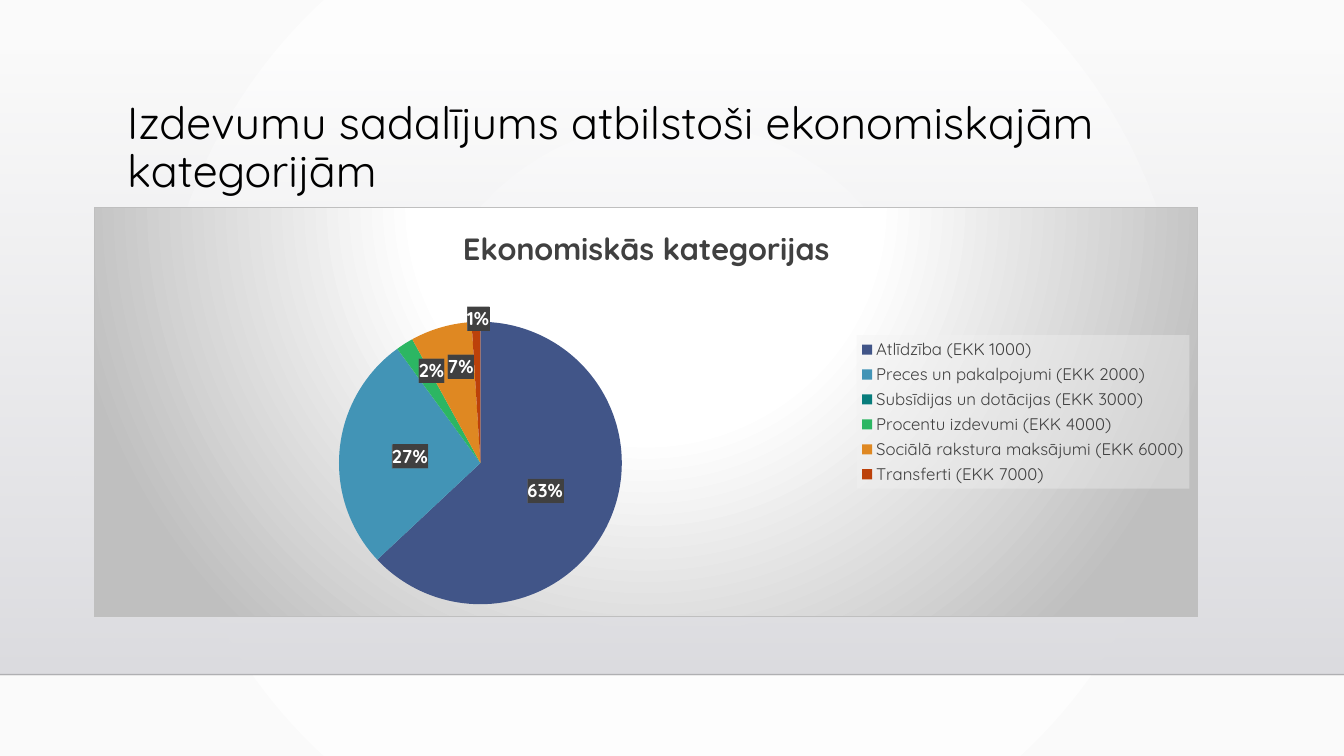
from copy import deepcopy
from dataclasses import dataclass

from lxml.etree import _Element as Element
from pptx import Presentation
from pptx.chart.data import CategoryChartData
from pptx.dml.color import RGBColor
from pptx.enum.chart import XL_CHART_TYPE as ChartType, XL_LABEL_POSITION as LabelPosition
from pptx.enum.chart import XL_LEGEND_POSITION as LegendPosition
from pptx.enum.shapes import MSO_CONNECTOR as Connector, MSO_SHAPE as Shape
from pptx.enum.text import MSO_ANCHOR as Anchor, PP_ALIGN as Align
from pptx.oxml import parse_xml
from pptx.oxml.ns import nsdecls, qn
from pptx.util import Cm, Pt

FONT = "Quicksand"
TOTAL_NAME = "Ekonomiskās kategorijas"


@dataclass(frozen=True)
class Category:
    name: str
    percent: int
    color: str
    label_shift: tuple[float, float] | None = None


CATEGORIES = [
    Category("Atlīdzība (EKK 1000)", 63, "415588"),
    Category("Preces un pakalpojumi (EKK 2000)", 27, "4294B6"),
    Category("Subsīdijas un dotācijas (EKK 3000)", 0, "087D7C"),
    Category("Procentu izdevumi (EKK 4000)", 2, "2CB663", (-0.01, -0.08)),
    Category("Sociālā rakstura maksājumi (EKK 6000)", 7, "DF8822", (0, -0.07)),
    Category("Transferti (EKK 7000)", 1, "BC410A", (0, -0.18)),
]


def rgb(color: str) -> RGBColor:
    return RGBColor.from_string(color)


def set_font(font, size: float, color: str, bold: bool = False) -> None:
    font.name, font.size, font.bold = FONT, Pt(size), bold
    font.color.rgb = rgb(color)


def solid(color: str, alpha: int = 100) -> str:
    return f'<a:srgbClr val="{color}"><a:alpha val="{alpha * 1000}"/></a:srgbClr>'


def gradient(stops: list[tuple[int, str, int]], direction: str) -> str:
    marks = "".join(f'<a:gs pos="{at * 1000}">{solid(color, alpha)}</a:gs>'
                    for at, color, alpha in stops)
    return (f'<a:gradFill {nsdecls("a")} rotWithShape="1">'
            f'<a:gsLst>{marks}</a:gsLst>{direction}</a:gradFill>')


def circle(top: int, bottom: int) -> str:
    return (f'<a:path path="circle"><a:fillToRect l="50000" t="{top * 1000}" '
            f'r="50000" b="{bottom * 1000}"/></a:path>')


def chart_frame(content: str) -> Element:
    return parse_xml(f'<c:spPr {nsdecls("c", "a")}>{content}</c:spPr>')


def add_backdrop(slide, width: int) -> None:
    paper = gradient([(0, "FFFFFF", 100), (100, "FAFAFA", 100)], circle(50, 50))
    slide.element.cSld.insert(0, parse_xml(
        f'<p:bg {nsdecls("p", "a")}><p:bgPr>{paper}<a:effectLst/></p:bgPr></p:bg>'))

    wall = slide.shapes.add_shape(Shape.RECTANGLE, 0, Cm(1.3), width, Cm(15.7))
    wall.shadow.inherit = False
    wall.line.fill.background()
    shade = gradient([(0, "DCDCE0", 0), (100, "DEDEE2", 100)],
                     '<a:lin ang="5400000" scaled="0"/>')
    wall.element.spPr.find(qn("a:prstGeom")).addnext(parse_xml(shade))

    floor = slide.shapes.add_connector(Connector.STRAIGHT, 0, Cm(17), width, Cm(17))
    floor.line.width = Pt(1)
    floor.line.color.rgb = rgb("000001")
    ink = floor.element.spPr.find(".//" + qn("a:srgbClr"))
    ink.append(parse_xml(f'<a:alpha {nsdecls("a")} val="20000"/>'))
    floor.element.spPr.append(parse_xml(f'<a:effectLst {nsdecls("a")}/>'))


def add_heading(slide, text: str) -> None:
    heading = slide.shapes.title
    heading.element.getparent().append(heading.element)
    heading.left, heading.top, heading.width, heading.height = (
        Cm(2.95), Cm(2.29), Cm(26.67), Cm(2.92))
    frame = heading.text_frame
    frame.word_wrap = True
    frame.vertical_anchor = Anchor.MIDDLE
    line = frame.paragraphs[0]
    line.alignment, line.line_spacing = Align.LEFT, 0.9
    run = line.add_run()
    run.text = text
    set_font(run.font, 32, "000000")


def format_labels(series) -> None:
    labels = series.data_labels
    labels.show_value, labels.show_percentage = False, True
    labels.number_format, labels.number_format_is_linked = "0%", False
    labels.position = LabelPosition.CENTER
    set_font(labels.font, 13.3, "FFFFFF", True)
    root = series._element.find(qn("c:dLbls"))
    for leader in root.findall(qn("c:showLeaderLines")):
        leader.set("val", "0")
    root.find(qn("c:txPr")).addprevious(chart_frame(
        f'<a:pattFill prst="dkVert"><a:fgClr>{solid("404040")}</a:fgClr>'
        f'<a:bgClr>{solid("595959")}</a:bgClr></a:pattFill>'))
    shared = [part for part in root if part.tag != qn("c:showLeaderLines")]

    special = []
    for index, category in enumerate(CATEGORIES):
        if category.percent == 0:
            special.append(parse_xml(f'<c:dLbl {nsdecls("c")}><c:idx val="{index}"/>'
                                     '<c:delete val="1"/></c:dLbl>'))
        elif category.label_shift:
            x, y = category.label_shift
            label = parse_xml(
                f'<c:dLbl {nsdecls("c")}><c:idx val="{index}"/><c:layout><c:manualLayout>'
                f'<c:x val="{x}"/><c:y val="{y}"/></c:manualLayout></c:layout></c:dLbl>')
            label.extend(deepcopy(part) for part in shared)
            special.append(label)
    for place, label in enumerate(special):
        root.insert(place, label)


def add_category_chart(slide) -> None:
    data = CategoryChartData()
    data.categories = [category.name for category in CATEGORIES]
    data.add_series(TOTAL_NAME, [category.percent for category in CATEGORIES])
    chart = slide.shapes.add_chart(ChartType.PIE, Cm(2.36), Cm(5.21), Cm(27.84),
                                   Cm(10.34), data).chart
    set_font(chart.font, 10, "000000")

    chart.has_title = True
    caption = chart.chart_title.text_frame.paragraphs[0].add_run()
    caption.text = TOTAL_NAME
    set_font(caption.font, 22, "404040", True)

    chart.has_legend = True
    legend = chart.legend
    legend.position, legend.include_in_layout = LegendPosition.RIGHT, False
    set_font(legend.font, 12, "404040")
    legend._element.find(qn("c:txPr")).addprevious(
        chart_frame(f'<a:solidFill>{solid("F2F2F2", 39)}</a:solidFill>'))

    plot = chart.plots[0]
    plot.vary_by_categories = True
    series = plot.series[0]
    for index, category in enumerate(CATEGORIES):
        slice_format = series.points[index].format
        slice_format.fill.solid()
        slice_format.fill.fore_color.rgb = rgb(category.color)
        slice_format.line.fill.background()
    format_labels(series)

    space = chart._chartSpace
    glow = gradient([(0, "FFFFFF", 100), (39, "FFFFFF", 100), (100, "BFBFBF", 100)],
                    circle(-80, 180))
    space.find(qn("c:chart")).addnext(chart_frame(
        f'{glow}<a:ln w="9525"><a:solidFill>{solid("BFBFBF")}</a:solidFill></a:ln>'))

    area = space.find(".//" + qn("c:plotArea"))
    for layout in area.findall(qn("c:layout")):
        area.remove(layout)
    area.insert(0, parse_xml(
        f'<c:layout {nsdecls("c")}><c:manualLayout><c:layoutTarget val="inner"/>'
        '<c:xMode val="edge"/><c:yMode val="edge"/><c:x val="0.22"/><c:y val="0.28"/>'
        '<c:w val="0.26"/><c:h val="0.69"/></c:manualLayout></c:layout>'))


def main() -> None:
    deck = Presentation()
    deck.slide_width, deck.slide_height = Cm(33.87), Cm(19.05)
    slide = deck.slides.add_slide(deck.slide_layouts[5])
    add_backdrop(slide, deck.slide_width)
    add_heading(slide, "Izdevumu sadalījums atbilstoši ekonomiskajām kategorijām")
    add_category_chart(slide)
    deck.save("out.pptx")


if __name__ == "__main__":
    main()
